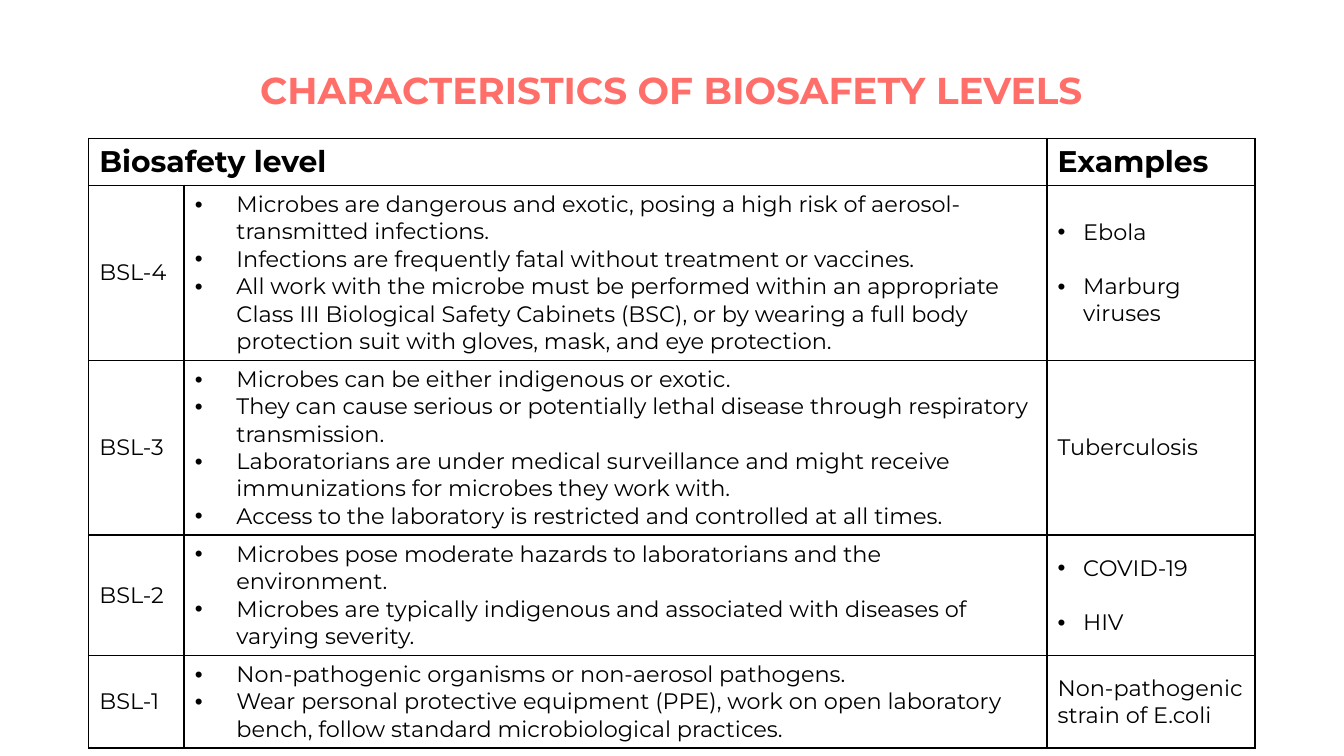
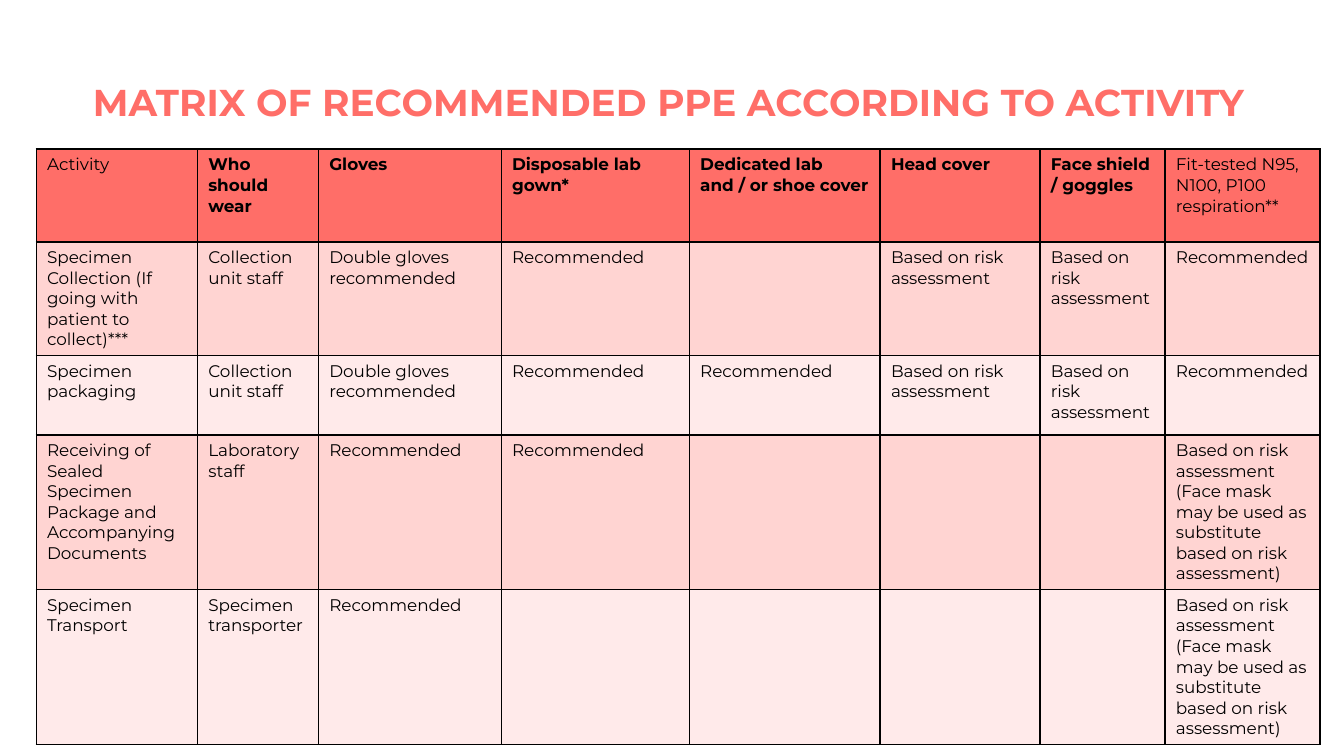
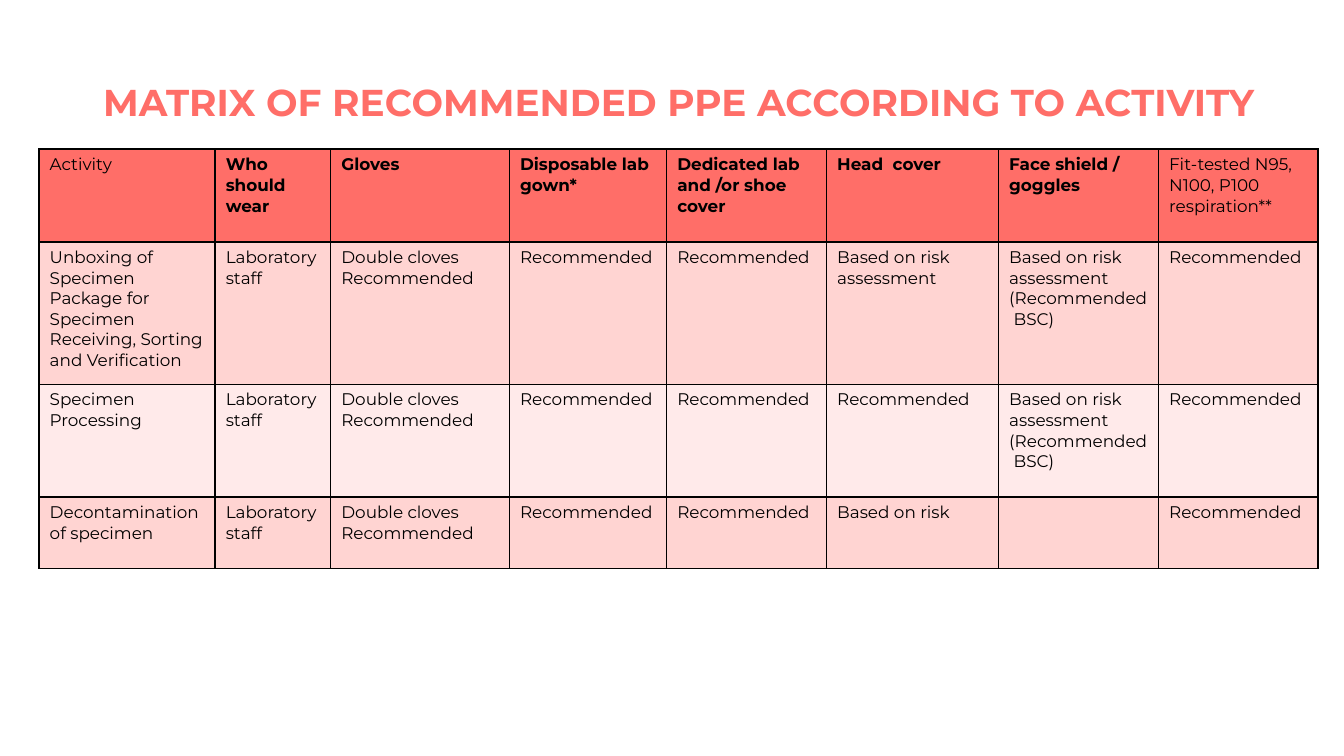
from dataclasses import dataclass
from typing import NamedTuple

from lxml.etree import SubElement
from pptx import Presentation
from pptx.dml.color import RGBColor
from pptx.enum.text import MSO_ANCHOR, MSO_AUTO_SIZE, PP_ALIGN
from pptx.oxml.ns import qn
from pptx.util import Inches, Pt


@dataclass(frozen=True)
class Theme:
    font: str = "Montserrat"
    coral: str = "FF6E68"
    pink: str = "FFD4D2"
    blush: str = "FFEAEA"
    black: str = "000000"
    white: str = "FFFFFF"
    title: float = 20
    heading: float = 16
    body: float = 12
    small: float = 9
    border: float = 1
    inset_x: float = 0.08
    inset_y: float = 0.04


class Box(NamedTuple):
    left: float
    top: float
    width: float
    height: float


class Content(NamedTuple):
    paragraphs: tuple
    indent: float = 0
    gap: float = 0


class Style(NamedTuple):
    size: float
    bold: bool = False
    fill: str | None = None
    anchor: MSO_ANCHOR = MSO_ANCHOR.TOP


@dataclass(frozen=True)
class Grid:
    left: float
    top: float
    cols: list
    heights: list
    rows: list


THEME = Theme()


def line(*paragraphs: str) -> Content:
    return Content(paragraphs)


def duties(*items: str) -> Content:
    return Content(items, 0.31)


def examples(*items: str) -> Content:
    return Content(items, 0.19, 14.6)


def add_run(p, text: str, size: float, bold: bool, color: str) -> None:
    r = p.add_run()
    r.text = text
    r.font.name = THEME.font
    r.font.size = Pt(size)
    r.font.bold = bold
    r.font.color.rgb = RGBColor.from_string(color)


def add_bullet(p, indent: float) -> None:
    pPr = p._p.get_or_add_pPr()
    pPr.set("marL", str(Inches(indent)))
    pPr.set("indent", str(-Inches(indent)))
    color = SubElement(pPr, qn("a:buClr"))
    SubElement(color, qn("a:srgbClr"), val=THEME.black)
    SubElement(pPr, qn("a:buFont"), typeface="Arial")
    SubElement(pPr, qn("a:buChar"), char="•")


def add_borders(cell) -> None:
    tcPr = cell._tc.get_or_add_tcPr()
    for side in ("lnL", "lnR", "lnT", "lnB"):
        ln = SubElement(tcPr, qn(f"a:{side}"), w=str(Pt(THEME.border)))
        fill = SubElement(ln, qn("a:solidFill"))
        SubElement(fill, qn("a:srgbClr"), val=THEME.black)


def format_cell(cell, content: Content | str, style: Style) -> None:
    cell.margin_left = cell.margin_right = Inches(THEME.inset_x)
    cell.margin_top = cell.margin_bottom = Inches(THEME.inset_y)
    cell.vertical_anchor = style.anchor
    add_borders(cell)
    if style.fill:
        cell.fill.solid()
        cell.fill.fore_color.rgb = RGBColor.from_string(style.fill)
    else:
        cell.fill.background()
    if not content:
        return
    if isinstance(content, str):
        content = line(content)
    tf = cell.text_frame
    for i, text in enumerate(content.paragraphs):
        p = tf.add_paragraph() if i else tf.paragraphs[0]
        if i and content.gap:
            p.space_before = Pt(content.gap)
        if content.indent:
            add_bullet(p, content.indent)
        add_run(p, text, style.size, style.bold, THEME.black)


def add_titled_slide(prs, title: str, box: Box):
    s = prs.slides.add_slide(prs.slide_layouts[5])
    sp = s.shapes.title
    sp.left, sp.top, sp.width, sp.height = map(Inches, box)
    tf = sp.text_frame
    tf.word_wrap = True
    tf.auto_size = MSO_AUTO_SIZE.NONE
    tf.vertical_anchor = MSO_ANCHOR.TOP
    tf.margin_left = tf.margin_right = tf.margin_top = tf.margin_bottom = Inches(0.1)
    p = tf.paragraphs[0]
    p.alignment = PP_ALIGN.CENTER
    add_run(p, title, THEME.title, True, THEME.coral)
    return s


def add_grid(s, grid: Grid, style_of):
    table = s.shapes.add_table(
        len(grid.heights), len(grid.cols), Inches(grid.left), Inches(grid.top),
        Inches(sum(grid.cols)), Inches(sum(grid.heights)),
    ).table
    table.first_row = table.horz_banding = False
    for column, width in zip(table.columns, grid.cols):
        column.width = Inches(width)
    for row, height in zip(table.rows, grid.heights):
        row.height = Inches(height)
    for i, row in enumerate(grid.rows):
        for j, content in enumerate(row):
            format_cell(table.cell(i, j), content, style_of(i, j))
    return table


def level_style(row: int, col: int) -> Style:
    if row == 0:
        return Style(THEME.heading, True)
    return Style(THEME.body, False, THEME.white, MSO_ANCHOR.MIDDLE)


def matrix_style(row: int, col: int) -> Style:
    if row == 0:
        return Style(THEME.small, 0 < col < 7, THEME.coral)
    return Style(THEME.small, False, THEME.pink if row % 2 else THEME.blush)


def matrix_header(shoe_cover: str, head_cover: str) -> list:
    return ["Activity", "Who should wear", "Gloves", "Disposable lab gown*", shoe_cover,
            head_cover, "Face shield / goggles", "Fit-tested N95, N100, P100 respiration**"]


REC = "Recommended"
RISK = "Based on risk assessment"
MASK = f"{RISK} (Face mask may be used as substitute based on risk assessment)"
CABINET = line(f"{RISK} (Recommended", " BSC)")
COLLECTORS = ["Collection unit staff", "Double gloves recommended", REC]
LAB_STAFF = ["Laboratory staff", "Double cloves Recommended", REC, REC]
MATRIX_TITLE = "MATRIX OF RECOMMENDED PPE ACCORDING TO ACTIVITY"

LEVELS = Grid(
    0.66, 1.03, [0.71, 6.42, 1.55], [0.34, 1.3, 1.3, 0.89, 0.68],
    [
        ["Biosafety level", "", "Examples"],
        ["BSL-4",
         duties(
             "Microbes are dangerous and exotic, posing a high risk of aerosol-transmitted infections.",
             "Infections are frequently fatal without treatment or vaccines.",
             "All work with the microbe must be performed within an appropriate Class III "
             "Biological Safety Cabinets (BSC), or by wearing a full body protection suit "
             "with gloves, mask, and eye protection."),
         examples("Ebola", "Marburg viruses")],
        ["BSL-3",
         duties(
             "Microbes can be either indigenous or exotic.",
             "They can cause serious or potentially lethal disease through respiratory transmission.",
             "Laboratorians are under medical surveillance and might receive immunizations "
             "for microbes they work with.",
             "Access to the laboratory is restricted and controlled at all times."),
         "Tuberculosis"],
        ["BSL-2",
         duties(
             "Microbes pose moderate hazards to laboratorians and the environment.",
             "Microbes are typically indigenous and associated with diseases of varying severity."),
         examples("COVID-19", "HIV")],
        ["BSL-1",
         duties(
             "Non-pathogenic organisms or non-aerosol pathogens.",
             "Wear personal protective equipment (PPE), work on open laboratory bench, "
             "follow standard microbiological practices."),
         "Non-pathogenic strain of E.coli"],
    ],
)

FIELD_MATRIX = Grid(
    0.27, 1.11, [1.2, 0.9, 1.36, 1.4, 1.42, 1.19, 0.93, 1.15], [0.69, 0.84, 0.59, 1.15, 1.15],
    [
        matrix_header("Dedicated lab and / or shoe cover", "Head cover"),
        ["Specimen Collection (If going with patient to collect)***",
         *COLLECTORS, "", RISK, RISK, REC],
        ["Specimen packaging", *COLLECTORS, REC, RISK, RISK, REC],
        ["Receiving of Sealed Specimen Package and Accompanying Documents",
         "Laboratory staff", REC, REC, "", "", "", MASK],
        ["Specimen Transport", "Specimen transporter", REC, "", "", "", "", MASK],
    ],
)

LAB_MATRIX = Grid(
    0.29, 1.11, [1.31, 0.86, 1.33, 1.17, 1.19, 1.28, 1.19, 1.19], [0.69, 1.06, 0.84, 0.53],
    [
        matrix_header("Dedicated lab and /or shoe cover", "Head  cover"),
        ["Unboxing of Specimen Package for Specimen Receiving, Sorting and Verification",
         *LAB_STAFF, RISK, CABINET, REC],
        ["Specimen Processing", *LAB_STAFF, REC, CABINET, REC],
        ["Decontamination of specimen", *LAB_STAFF, "Based on risk", "", REC],
    ],
)


def main() -> None:
    prs = Presentation()
    prs.slide_width = Inches(10)
    prs.slide_height = prs.slide_width * 9 // 16

    s = add_titled_slide(prs, "CHARACTERISTICS OF BIOSAFETY LEVELS", Box(0.66, 0.4, 8.67, 0.63))
    table = add_grid(s, LEVELS, level_style)
    table.cell(0, 0).merge(table.cell(0, 1))

    for box, grid in (
        (Box(0.13, 0.49, 9.69, 0.63), FIELD_MATRIX),
        (Box(0.29, 0.49, 9.52, 0.63), LAB_MATRIX),
    ):
        s = add_titled_slide(prs, MATRIX_TITLE, box)
        add_grid(s, grid, matrix_style)

    prs.save("out.pptx")


if __name__ == "__main__":
    main()
